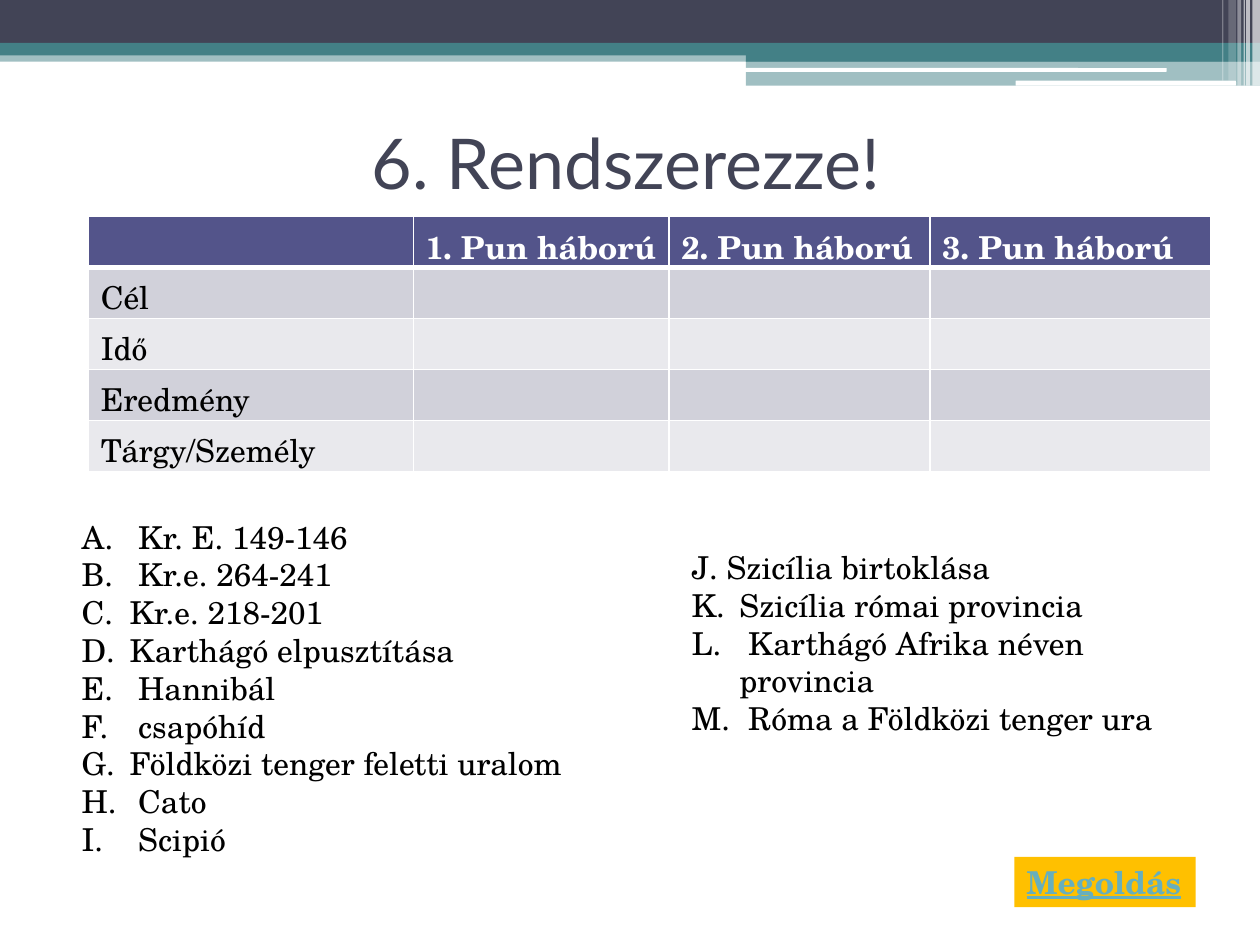
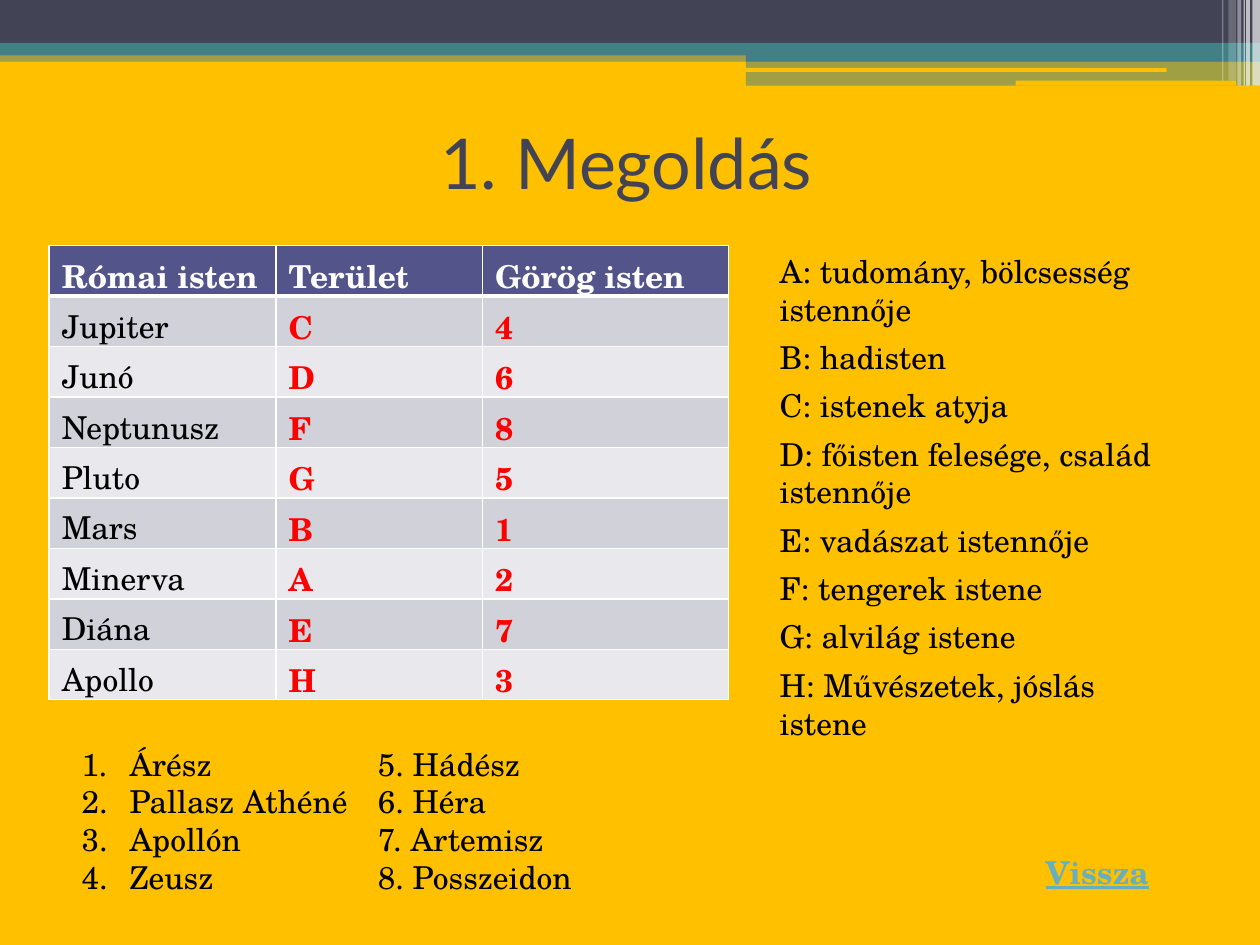
from lxml import etree
from pptx import Presentation
from pptx import util as u
from pptx.dml.color import RGBColor
from pptx.enum import shapes, text
from pptx.oxml import ns

COLORS = {
    "white": "FFFFFF", "black": "000000", "gold": "FFC000", "slate": "424456",
    "teal": "438086", "link": "67AFBD", "answer": "FF0000",
    "header": "53548A", "odd_row": "D1D1DA", "even_row": "E9E9ED",
}
TITLE_FONT, BODY_FONT = "Lato", "TeX Gyre Schola"
LIST_INDENT = 0.38

# left, top, width, height, colour, opacity in percent
BANDS = [
    (0, 0.4, 10, 0.09, "teal", 50),
    (0, 0, 10, 0.34, "slate", 100),
    (0, 0.34, 10, 0.1, "teal", 100),
    (5.92, 0.39, 4.08, 0.1, "teal", 100),
    (5.92, 0.48, 4.08, 0.2, "teal", 50),
]
CUTOUTS = [(5.91, 0.54, 3.35, 0.03), (8.06, 0.64, 1.75, 0.04)]
# left, width, height, opacity in percent
STRIPES = [
    (9.94, 0.06, 0.68, 65), (9.89, 0.03, 0.68, 65), (9.87, 0.01, 0.68, 60),
    (9.82, 0.03, 0.68, 40), (9.75, 0.06, 0.64, 20), (9.7, 0.01, 0.64, 30),
]


def rgb(color):
    return RGBColor.from_string(COLORS[color])


def inches(*lengths):
    return [u.Inches(length) for length in lengths]


def child(parent, tag, **attributes):
    return etree.SubElement(parent, ns.qn(tag), {k: str(v) for k, v in attributes.items()})


def paint(item, color, opacity=100):
    item.fill.solid()
    item.fill.fore_color.rgb = rgb(color)
    if opacity < 100:
        fill_color = item.fill._xPr.find(ns.qn("a:solidFill"))[0]
        child(fill_color, "a:alpha", val=opacity * 1000)


def write(paragraph, content, size=18, font=BODY_FONT, color="black", bold=False,
          underline=False, align=None, before=0):
    run = paragraph.add_run()
    run.text = content
    run.font.size = u.Pt(size)
    run.font.name = font
    run.font.color.rgb = rgb(color)
    run.font.bold = bold
    run.font.underline = underline
    paragraph.alignment = align
    paragraph.space_before = u.Pt(before)


def number(paragraph, scheme, start=1, tab=None):
    """Give a paragraph automatic numbering and, if asked, one tab stop."""
    properties = paragraph._p.get_or_add_pPr()
    indent = u.Inches(LIST_INDENT)
    properties.set("marL", str(indent))
    properties.set("indent", str(-indent))
    child(properties, "a:buFont", typeface="+mj-lt")
    child(properties, "a:buAutoNum", type=scheme, startAt=start)
    if tab:
        child(child(properties, "a:tabLst"), "a:tab", pos=u.Inches(tab), algn="l")


def border(cell, widths):
    """Draw white cell borders; widths are points for left, right, top, bottom."""
    properties = cell._tc.get_or_add_tcPr()
    for position, (side, width) in enumerate(zip("LRTB", widths)):
        line = etree.Element(ns.qn(f"a:ln{side}"), w=str(u.Pt(width)))
        child(child(line, "a:solidFill"), "a:srgbClr", val=COLORS["white"])
        properties.insert(position, line)


class Deck:
    def __init__(self):
        self.presentation = Presentation()
        self.presentation.slide_width, self.presentation.slide_height = inches(10, 7.5)
        self.slide = None

    def new_slide(self, title, background):
        self.slide = self.presentation.slides.add_slide(self.presentation.slide_layouts[5])
        self.slide.background.fill.solid()
        self.slide.background.fill.fore_color.rgb = rgb(background)
        for *place, color, opacity in BANDS:
            self.bar(place, color, opacity)
        for place in CUTOUTS:
            self.bar(place, background, kind=shapes.MSO_SHAPE.ROUNDED_RECTANGLE)
        for left, width, height, opacity in STRIPES:
            self.bar((left, 0, width, height), "white", opacity)
        self.title(title)

    def title(self, content):
        heading = self.slide.shapes.title
        heading.left, heading.top, heading.width, heading.height = inches(0.47, 0.7, 9, 1.17)
        heading.text_frame.vertical_anchor = text.MSO_ANCHOR.MIDDLE
        write(heading.text_frame.paragraphs[0], content, size=40, font=TITLE_FONT,
              color="slate", align=text.PP_ALIGN.CENTER)

    def bar(self, place, color, opacity=100, kind=shapes.MSO_SHAPE.RECTANGLE):
        bar = self.slide.shapes.add_shape(kind, *inches(*place))
        bar.shadow.inherit = False
        bar.line.fill.background()
        paint(bar, color, opacity)

    def text_box(self, place, lines, wrap=True, **style):
        box = self.slide.shapes.add_textbox(*inches(*place))
        frame = box.text_frame
        frame.word_wrap = wrap
        for index, line in enumerate(lines):
            paragraph = frame.add_paragraph() if index else frame.paragraphs[0]
            write(paragraph, line, **style)
        return box

    def numbered(self, place, lines, scheme, start=1, tab=None, unnumbered=0):
        """Add a numbered list whose first `unnumbered` lines stay plain."""
        box = self.text_box(place, lines)
        for paragraph in box.text_frame.paragraphs[unnumbered:]:
            number(paragraph, scheme, start, tab)

    def button(self, place, label):
        box = self.text_box(place, [label], wrap=False, color="link", bold=True, underline=True)
        paint(box, "gold")

    def table(self, left, top, widths, row_height, rows, answers=False):
        """Add a table with a header row; answers marks all but the first column."""
        place = inches(left, top, sum(widths), row_height * len(rows))
        table = self.slide.shapes.add_table(len(rows), len(widths), *place).table
        for column, width in zip(table.columns, widths):
            column.width = u.Inches(width)
        for r, values in enumerate(rows):
            table.rows[r].height = u.Inches(row_height)
            fill = "header" if r == 0 else "odd_row" if r % 2 else "even_row"
            for c, value in enumerate(values):
                cell = table.cell(r, c)
                paint(cell, fill)
                border(cell, (1, 1, 3 if r == 1 else 1, 3 if r == 0 else 1))
                marked = answers and c > 0
                color = "white" if r == 0 else "answer" if marked else "black"
                if value:
                    write(cell.text_frame.paragraphs[0], value, color=color,
                          bold=r == 0 or marked)


def punic_wars(deck):
    deck.new_slide("6. Rendszerezze!", "white")
    deck.button((8.05, 6.8, 1.44, 0.4), "Megoldás")
    header = [""] + [f"{war}. Pun háború" for war in (1, 2, 3)]
    topics = ["Cél", "Idő", "Eredmény", "Tárgy/Személy"]
    deck.table(0.7, 1.72, [2.58, 2.03, 2.07, 2.23], 0.405,
               [header] + [[topic, "", "", ""] for topic in topics])
    deck.numbered((0.55, 4.06, 4.3, 2.83), [
        " Kr. E. 149-146", " Kr.e. 264-241", "Kr.e. 218-201", "Karthágó elpusztítása",
        " Hannibál", " csapóhíd", "Földközi tenger feletti uralom", " Cato", " Scipió",
    ], "alphaUcPeriod")
    deck.numbered((5.39, 4.3, 4.22, 1.62), [
        "J. Szicília birtoklása", "Szicília római provincia",
        " Karthágó Afrika néven provincia", " Róma a Földközi tenger ura",
    ], "alphaUcPeriod", start=11, unnumbered=1)


def gods_solution(deck):
    deck.new_slide("1. Megoldás", "gold")
    deck.button((8.2, 6.72, 1.03, 0.4), "Vissza")
    deck.table(0.39, 1.95, [1.8, 1.64, 1.95], 0.4, [
        ("Római isten", "Terület", "Görög isten"),
        ("Jupiter", "C", "4"),
        ("Junó", "D", "6"),
        ("Neptunusz", "F", "8"),
        ("Pluto", "G", "5"),
        ("Mars", "B", "1"),
        ("Minerva", "A", "2"),
        ("Diána", "E", "7"),
        ("Apollo", "H", "3"),
    ], answers=True)
    deck.text_box((6.09, 1.95, 3.44, 3.72), [
        "A: tudomány, bölcsesség istennője", "B: hadisten", "C: istenek atyja",
        "D: főisten felesége, család istennője", "E: vadászat istennője",
        "F: tengerek istene", "G: alvilág istene", "H: Művészetek, jóslás istene",
    ], before=6)
    deck.numbered((0.55, 5.86, 5.23, 1.31), [
        "Árész\t5. Hádész", "Pallasz Athéné\t6. Héra",
        "Apollón\t7. Artemisz", "Zeusz\t8. Posszeidon",
    ], "arabicPeriod", tab=2.35)


def main():
    deck = Deck()
    punic_wars(deck)
    gods_solution(deck)
    deck.presentation.save("out.pptx")


if __name__ == "__main__":
    main()
